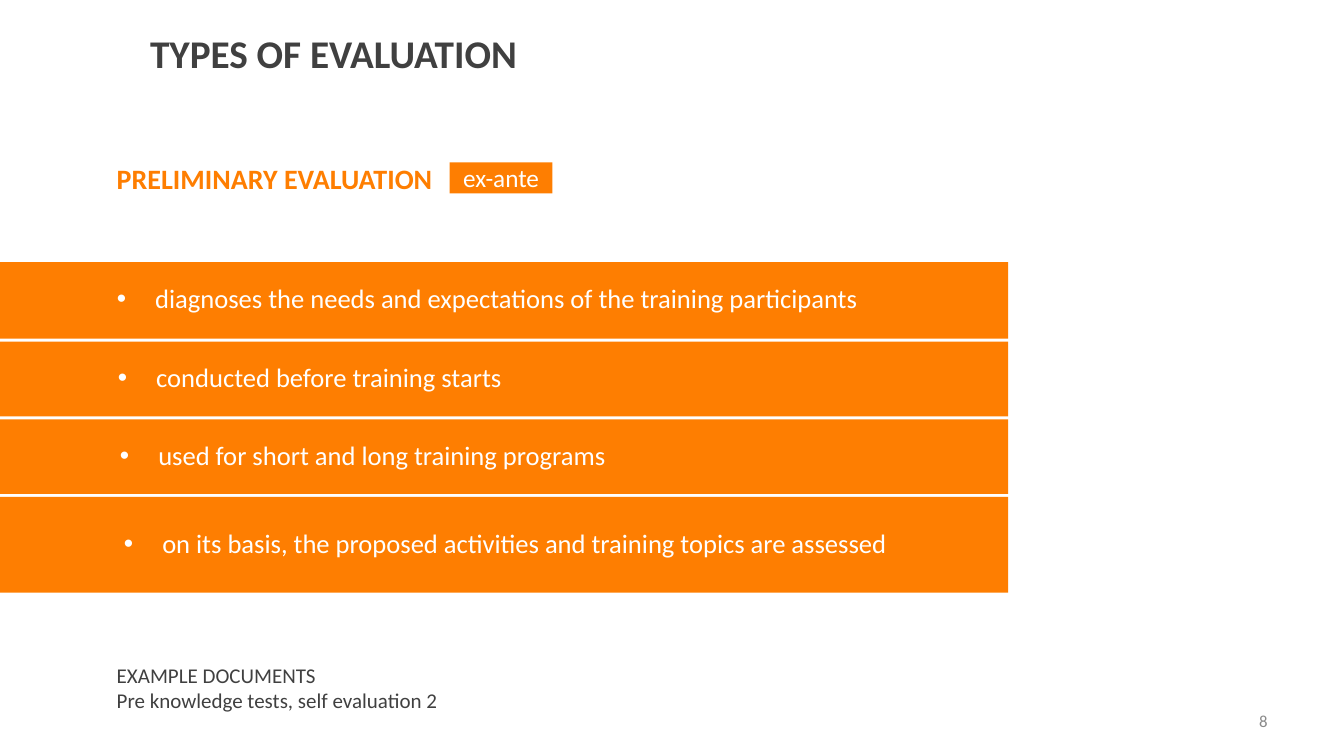
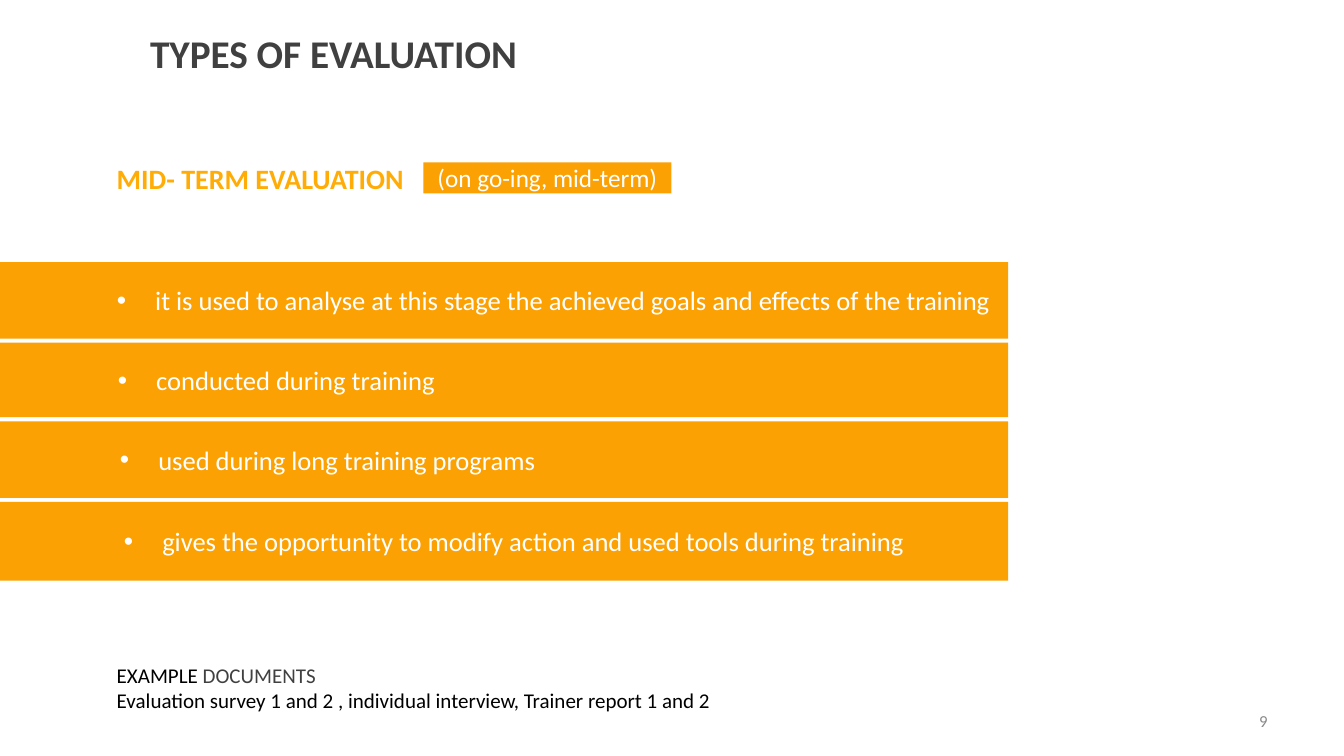
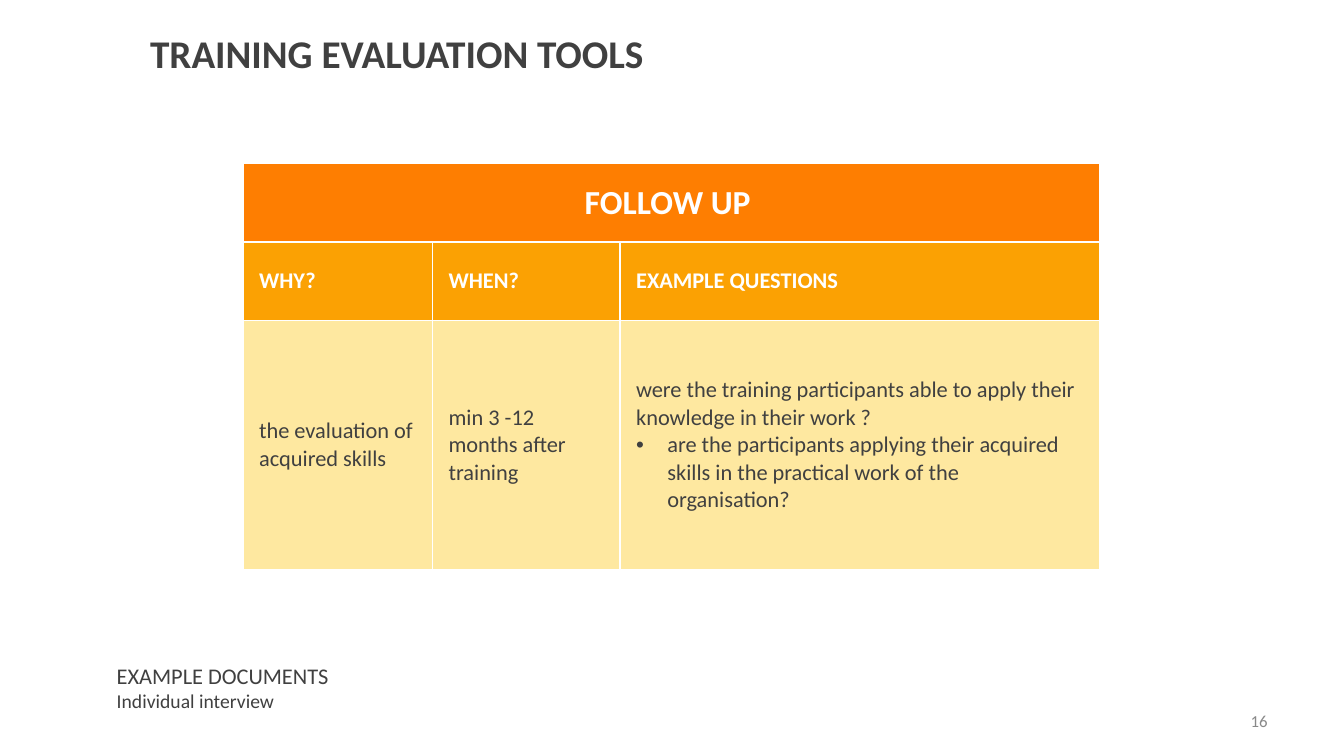
"""Three slides on types of training evaluation and follow-up tools."""
from lxml import etree
from pptx import Presentation, util as u
from pptx.dml.color import RGBColor
from pptx.enum import shapes, text
from pptx.oxml import ns

PX = 9144
FONT = "Calibri"
HUES = {
    "white": "FFFFFF", "black": "000000", "ink": "404040", "grey": "898989",
    "orange": "FE7E01", "gold": "FBA103", "amber": "FFAC06", "cream": "FEE8A0",
}
LEFT, MID, RIGHT = text.PP_ALIGN.LEFT, text.PP_ALIGN.CENTER, text.PP_ALIGN.RIGHT
TOP, CENTRE = text.MSO_ANCHOR.TOP, text.MSO_ANCHOR.MIDDLE

TYPES = [
    {
        "title": "TYPES OF EVALUATION", "page": "8",
        "head": ("PRELIMINARY EVALUATION", "orange"),
        "chip": ("ex-ante", 446, 102),
        "fill": "orange", "gap": 3, "line": 0.9,
        "bars": [
            ("diagnoses the needs and expectations of the training participants", 76),
            ("conducted before training starts", 74),
            ("used for short and long training programs", 74),
            ("on its basis, the proposed activities and training topics are assessed", 95),
        ],
        "docs": [
            [("EXAMPLE DOCUMENTS", 15, "ink")],
            [("Pre knowledge tests, self evaluation 2", 15, "ink")],
        ],
    },
    {
        "title": "TYPES OF EVALUATION", "page": "9",
        "head": ("MID- TERM EVALUATION", "amber"),
        "chip": ("(on go-ing, mid-term)", 420, 246),
        "fill": "gold", "gap": 4, "line": 1.0,
        "bars": [
            ("it is used to analyse at this stage the achieved goals and effects of the training", 76),
            ("conducted during training", 74),
            ("used during long training programs", 76),
            ("gives the opportunity to modify action and used tools during training", 78),
        ],
        "docs": [
            [("EXAMPLE ", 15, "black"), ("DOCUMENTS", 15, "ink")],
            [("Evaluation survey 1 and 2 , individual interview, Trainer report 1 and 2", 15, "black")],
        ],
    },
]
INSETS = [(6, 4), (7, 5), (9, 6), (13, 10)]

TOOLS = {
    "title": "TRAINING EVALUATION TOOLS", "page": "16",
    "cols": [188, 186, 476], "rows": [78, 78, 247],
    "name": "FOLLOW UP ",
    "heads": ["WHY?", "WHEN?", "EXAMPLE QUESTIONS"],
    "cells": [
        ["the evaluation of acquired skills"],
        ["min 3 -12 months after training"],
        [
            "were the training participants able to apply their knowledge in their work ?",
            "are the participants applying their acquired skills in the practical work of the organisation?",
        ],
    ],
    "docs": [
        [("EXAMPLE DOCUMENTS", 16, "ink")],
        [("Individual interview", 14, "ink")],
    ],
}


def px(n):
    return u.Emu(n * PX)


def hue(name):
    return RGBColor.from_string(HUES[name])


def paint(thing, name):
    thing.fill.solid()
    thing.fill.fore_color.rgb = hue(name)


def dot(para, left, hang):
    props = para._p.get_or_add_pPr()
    props.set("marL", str(px(left)))
    props.set("indent", str(-px(hang)))
    etree.SubElement(props, ns.qn("a:buFont")).set("typeface", "Arial")
    etree.SubElement(props, ns.qn("a:buChar")).set("char", "•")


def write(frame, paras, bold=False, align=LEFT):
    frame.word_wrap = True
    for i, runs in enumerate(paras):
        para = frame.add_paragraph() if i else frame.paragraphs[0]
        para.alignment = align
        for words, size, name in runs:
            run = para.add_run()
            run.text = words
            run.font.name, run.font.size = FONT, u.Pt(size)
            run.font.bold = bold
            run.font.color.rgb = hue(name)


def label(slide, box, paras, bold=False, align=LEFT, anchor=TOP):
    frame = slide.shapes.add_textbox(*map(px, box)).text_frame
    frame.vertical_anchor = anchor
    write(frame, paras, bold, align)


def block(slide, box, name, words, size, align=LEFT):
    shape = slide.shapes.add_shape(shapes.MSO_SHAPE.RECTANGLE, *map(px, box))
    shape.shadow.inherit = False
    paint(shape, name)
    shape.line.fill.background()
    shape.text_frame.vertical_anchor = CENTRE
    write(shape.text_frame, [[(words, size, "white")]], align=align)
    return shape.text_frame


def start(deck, data):
    slide = deck.slides.add_slide(deck.slide_layouts[6])
    label(slide, (139, 21, 945, 62), [[(data["title"], 28, "ink")]], True, anchor=CENTRE)
    label(slide, (956, 695, 311, 40), [[(data["page"], 12, "grey")]], align=RIGHT, anchor=CENTRE)
    label(slide, (106, 652, 1000, 61), data["docs"])
    return slide


def kind(deck, data):
    slide = start(deck, data)
    words, name = data["head"]
    label(slide, (106, 155, 403, 44), [[(words, 20, name)]], True)
    words, left, wide = data["chip"]
    block(slide, (left, 161, wide, 31), data["fill"], words, 18, MID)
    top = 260
    for (words, high), (side, edge) in zip(data["bars"], INSETS):
        frame = block(slide, (0, top, 1000, high), data["fill"], words, 19)
        frame.margin_left = frame.margin_right = px(side)
        frame.margin_top = frame.margin_bottom = px(edge)
        para = frame.paragraphs[0]
        dot(para, 148, 38)
        para.line_spacing = data["line"]
        top += high + data["gap"]


def border(cell):
    props = cell._tc.get_or_add_tcPr()
    for side in "LRTB":
        line = etree.SubElement(props, ns.qn("a:ln" + side), w=str(u.Pt(1)))
        fill = etree.SubElement(line, ns.qn("a:solidFill"))
        etree.SubElement(fill, ns.qn("a:srgbClr"), val=HUES["white"])


def tools(deck, data):
    slide = start(deck, data)
    cols, rows = data["cols"], data["rows"]
    box = (241, 162, sum(cols), sum(rows))
    grid = slide.shapes.add_table(len(rows), len(cols), *map(px, box)).table
    for col, wide in zip(grid.columns, cols):
        col.width = px(wide)
    for row, high, name in zip(grid.rows, rows, ("orange", "gold", "cream")):
        row.height = px(high)
        for cell in row.cells:
            border(cell)
            paint(cell, name)
            cell.vertical_anchor = CENTRE
            cell.margin_left = cell.margin_right = px(16)
            cell.margin_top = cell.margin_bottom = px(16)
    first = grid.cell(0, 0)
    first.merge(grid.cell(0, len(cols) - 1))
    write(first.text_frame, [[(data["name"], 24, "white")]], True, MID)
    for i, (head, lines) in enumerate(zip(data["heads"], data["cells"])):
        write(grid.cell(1, i).text_frame, [[(head, 16, "white")]], True)
        frame = grid.cell(2, i).text_frame
        write(frame, [[(line, 16, "ink")] for line in lines])
        for para in frame.paragraphs[1:]:
            dot(para, 31, 31)


def main():
    deck = Presentation()
    deck.slide_width, deck.slide_height = px(1333), px(750)
    for data in TYPES:
        kind(deck, data)
    tools(deck, TOOLS)
    deck.save("out.pptx")


if __name__ == "__main__":
    main()
